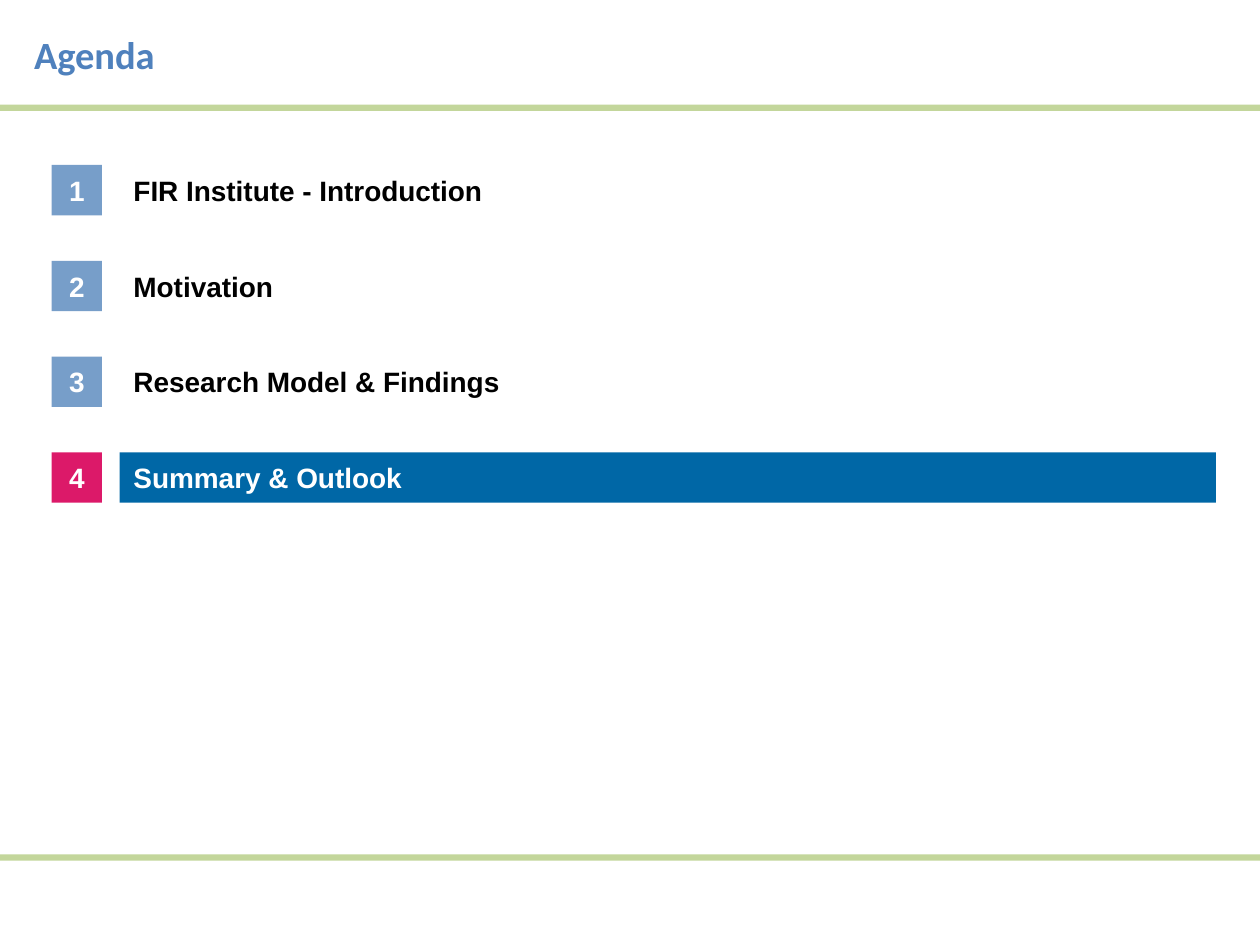
from dataclasses import dataclass

from pptx import Presentation
from pptx.dml.color import RGBColor
from pptx.enum.shapes import MSO_SHAPE
from pptx.enum.text import MSO_ANCHOR, PP_ALIGN
from pptx.shapes.autoshape import Shape
from pptx.slide import Slide
from pptx.util import Inches, Pt

RECTANGLE = MSO_SHAPE.RECTANGLE
MIDDLE = MSO_ANCHOR.MIDDLE
LEFT, CENTER = PP_ALIGN.LEFT, PP_ALIGN.CENTER

WHITE = RGBColor(0xFF, 0xFF, 0xFF)
BLACK = RGBColor(0x00, 0x00, 0x00)
RULE_GREEN = RGBColor(0xC3, 0xD6, 0x9B)
TITLE_BLUE = RGBColor(0x4F, 0x81, 0xBD)
NUMBER_BLUE = RGBColor(0x77, 0x9E, 0xC9)
CURRENT_BLUE = RGBColor(0x00, 0x67, 0xA6)
CURRENT_PINK = RGBColor(0xDC, 0x19, 0x69)

SLIDE_WIDTH, SLIDE_HEIGHT = 10, 7.5
RULE_TOPS = (0.83, 6.78)
RULE_HEIGHT = 0.05
FIRST_TOP, ROW_PITCH, ROW_HEIGHT = 1.31, 0.76, 0.4
NUMBER_LEFT = 0.41
TOPIC_LEFT, TOPIC_WIDTH, TOPIC_INSET = 0.95, 8.7, 0.11


@dataclass(frozen=True)
class AgendaItem:
    topic: str
    current: bool = False


AGENDA = (
    AgendaItem("FIR Institute - Introduction"),
    AgendaItem("Motivation"),
    AgendaItem("Research Model & Findings"),
    AgendaItem("Summary & Outlook", current=True),
)


def add_block(slide: Slide, left: float, top: float, width: float,
              height: float, color: RGBColor) -> Shape:
    block = slide.shapes.add_shape(
        RECTANGLE, Inches(left), Inches(top), Inches(width), Inches(height))
    block.shadow.inherit = False
    block.fill.solid()
    block.fill.fore_color.rgb = color
    block.line.fill.background()
    return block


def write_label(box: Shape, label: str, color: RGBColor, font: str,
                size: float, align: PP_ALIGN) -> None:
    frame = box.text_frame
    frame.word_wrap = True
    frame.vertical_anchor = MIDDLE
    frame.text = label
    paragraph = frame.paragraphs[0]
    paragraph.alignment = align
    run_font = paragraph.runs[0].font
    run_font.name = font
    run_font.size = Pt(size)
    run_font.bold = True
    run_font.color.rgb = color


def set_insets(box: Shape, side: float) -> None:
    frame = box.text_frame
    frame.margin_left = frame.margin_right = Inches(side)
    frame.margin_top = frame.margin_bottom = 0


def add_agenda_row(slide: Slide, number: int, item: AgendaItem) -> None:
    top = FIRST_TOP + (number - 1) * ROW_PITCH
    if item.current:
        topic = add_block(slide, TOPIC_LEFT, top, TOPIC_WIDTH, ROW_HEIGHT, CURRENT_BLUE)
    else:
        topic = slide.shapes.add_textbox(
            Inches(TOPIC_LEFT), Inches(top), Inches(TOPIC_WIDTH), Inches(ROW_HEIGHT))
    set_insets(topic, TOPIC_INSET)
    write_label(topic, item.topic, WHITE if item.current else BLACK, "Arial", 16, LEFT)

    number_color = CURRENT_PINK if item.current else NUMBER_BLUE
    badge = add_block(slide, NUMBER_LEFT, top, ROW_HEIGHT, ROW_HEIGHT, number_color)
    set_insets(badge, 0)
    write_label(badge, str(number), WHITE, "Arial", 16, CENTER)


def main() -> None:
    presentation = Presentation()
    presentation.slide_width = Inches(SLIDE_WIDTH)
    presentation.slide_height = Inches(SLIDE_HEIGHT)
    slide = presentation.slides.add_slide(presentation.slide_layouts[5])

    title = slide.shapes.title
    title.left, title.top = Inches(0.17), Inches(0.01)
    title.width, title.height = Inches(9.67), Inches(0.84)
    write_label(title, "Agenda", TITLE_BLUE, "Calibri", 22, LEFT)

    for rule_top in RULE_TOPS:
        add_block(slide, 0, rule_top, SLIDE_WIDTH, RULE_HEIGHT, RULE_GREEN)
    for number, item in enumerate(AGENDA, start=1):
        add_agenda_row(slide, number, item)

    presentation.save("out.pptx")


if __name__ == "__main__":
    main()
